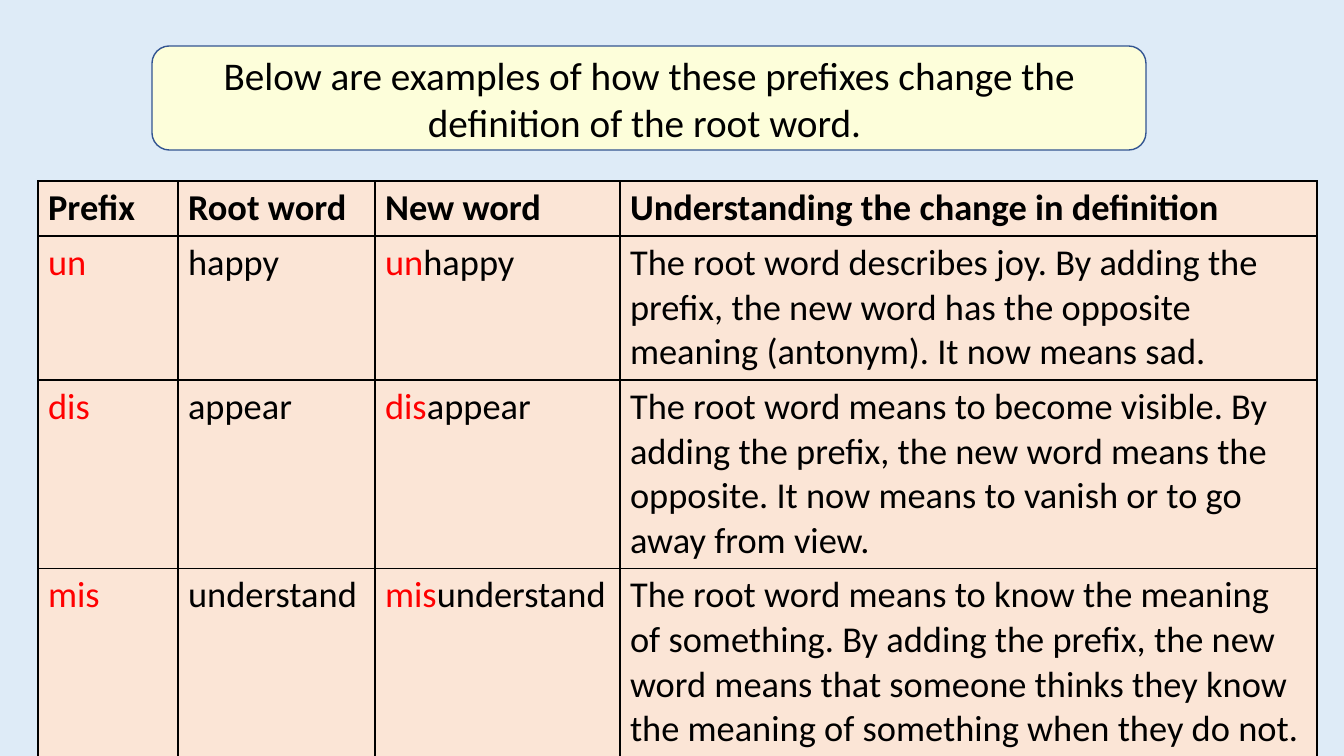
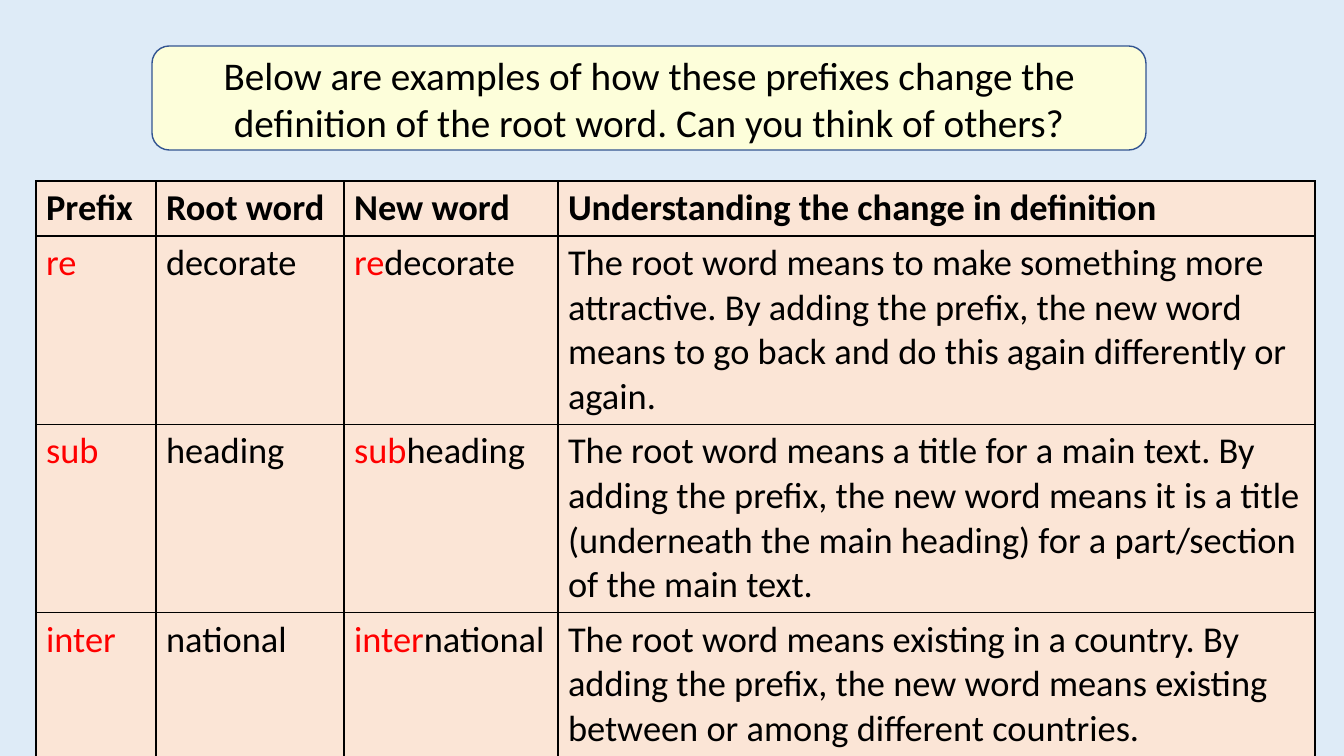
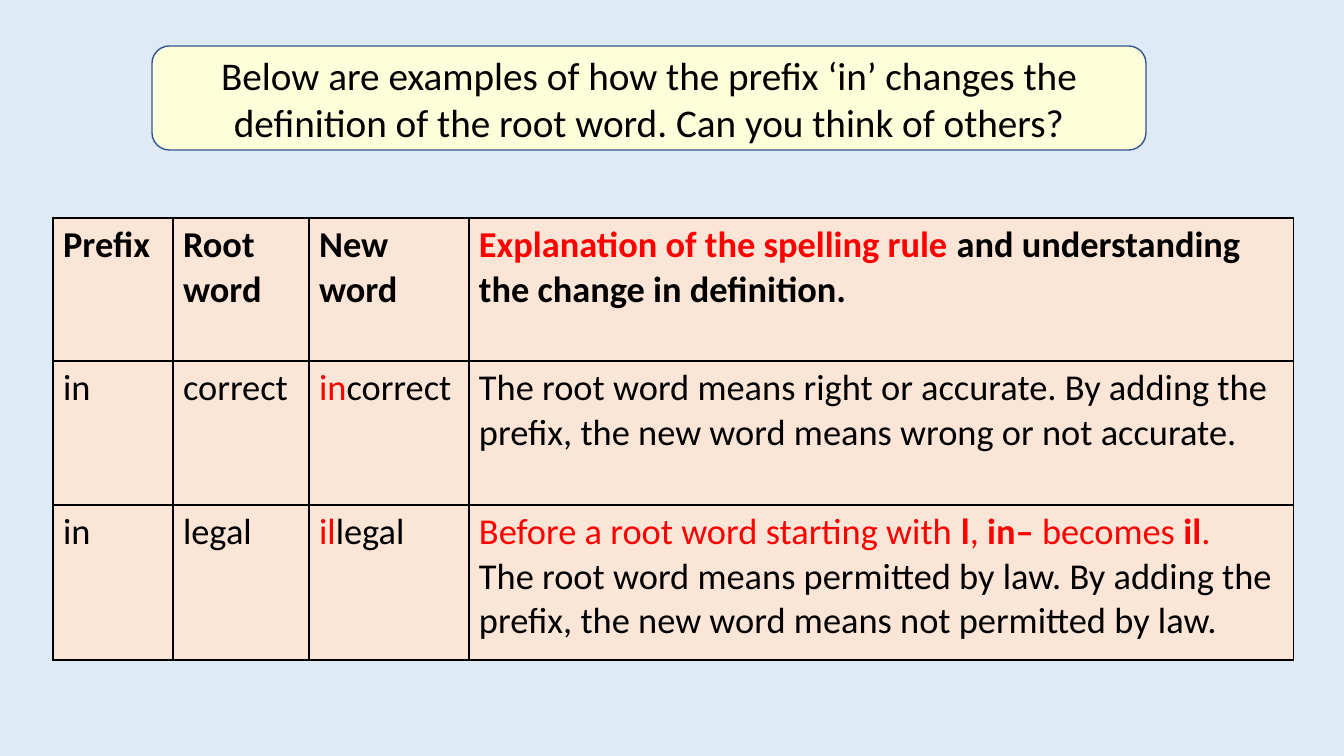
from lxml import etree
from pptx import Presentation
from pptx import util as u
from pptx.dml.color import RGBColor
from pptx.enum import shapes, text
from pptx.oxml.ns import qn

FONT = "Calibri"
SKY, CREAM, PEACH = "DEEBF7", "FDFEDA", "FBE5D6"
BLUE, BLACK, RED = "325491", "000000", "FF0000"
BANNER = (152, 46, 994, 104)
HEAD = ["Prefix", "Root word", "New word",
        "Understanding the change in definition"]


def px(n):
    return u.Emu(round(n * 914400 / 100.8))


def rgb(code):
    return RGBColor.from_string(code)


def paint(fill, code):
    fill.solid()
    fill.fore_color.rgb = rgb(code)


def style(para, size, bold=False):
    font = para.font
    font.name, font.size, font.bold = FONT, u.Pt(size), bold
    font.color.rgb = rgb(BLACK)


def write(frame, words, size, bold=False):
    """Fill a frame: | switches red on and off, * switches bold."""
    for n, line in enumerate(words.split("\n")):
        para = frame.add_paragraph() if n else frame.paragraphs[0]
        style(para, size, bold)
        for i, part in enumerate(line.split("|")):
            for j, bit in enumerate(part.split("*")):
                if not bit:
                    continue
                run = para.add_run()
                run.text = bit
                if i % 2:
                    run.font.color.rgb = rgb(RED)
                if j % 2:
                    run.font.bold = True


def border(cell):
    props = cell._tc.get_or_add_tcPr()
    for side in ("lnL", "lnR", "lnT", "lnB"):
        line = etree.SubElement(props, qn("a:" + side), w=str(u.Pt(1)))
        fill = etree.SubElement(line, qn("a:solidFill"))
        etree.SubElement(fill, qn("a:srgbClr"), val=BLACK)


def banner(slide, words, box):
    shape = slide.shapes.add_shape(
        shapes.MSO_SHAPE.ROUNDED_RECTANGLE, *map(px, box))
    shape.shadow.inherit = False
    paint(shape.fill, CREAM)
    shape.line.color.rgb = rgb(BLUE)
    shape.line.width = u.Pt(1)
    frame = shape.text_frame
    frame.word_wrap = True
    frame.vertical_anchor = text.MSO_ANCHOR.MIDDLE
    write(frame, words, 28)
    frame.paragraphs[0].alignment = text.PP_ALIGN.CENTER


def grid(slide, rows, spot, wide, high):
    box = (*spot, sum(wide), sum(high))
    table = slide.shapes.add_table(
        len(high), len(wide), *map(px, box)).table
    table.first_row = table.horz_banding = False
    for col, size in zip(table.columns, wide):
        col.width = px(size)
    for row, size in zip(table.rows, high):
        row.height = px(size)
    for r, row in enumerate(rows):
        for c, words in enumerate(row):
            cell = table.cell(r, c)
            border(cell)
            paint(cell.fill, PEACH)
            write(cell.text_frame, words, 26, bold=r == 0)


def page(deck, title, rows, spot, wide, high):
    slide = deck.slides.add_slide(deck.slide_layouts[6])
    paint(slide.background.fill, SKY)
    banner(slide, title, BANNER)
    grid(slide, rows, spot, wide, high)


def entry(prefix, root, sense):
    """Row whose new word is the red prefix joined to the root."""
    return [f"|{prefix}|", root, f"|{prefix}|{root}", sense]


PAGES = [
    dict(
        title="Below are examples of how these prefixes change the "
              "definition of the root word. ",
        rows=[
            HEAD,
            entry("un", "happy",
                  "The root word describes joy. By adding the prefix, the "
                  "new word has the opposite meaning (antonym). It now "
                  "means sad."),
            entry("dis", "appear",
                  "The root word means to become visible. By adding the "
                  "prefix, the new word means the opposite. It now means "
                  "to vanish or to go away from view."),
            entry("mis", "understand",
                  "The root word means to know the meaning of something. "
                  "By adding the prefix, the new word means that someone "
                  "thinks they know the meaning of something when they "
                  "do not."),
        ],
        spot=(38, 181), wide=(140, 197, 245, 697), high=(55, 144, 188, 188)),
    dict(
        title="Below are examples of how these prefixes change the "
              "definition of the root word. Can you think of others?",
        rows=[
            HEAD,
            entry("re", "decorate",
                  "The root word means to make something more attractive. "
                  "By adding the prefix, the new word means to go back and "
                  "do this again differently or again."),
            entry("sub", "heading",
                  "The root word means a title for a main text. By adding "
                  "the prefix, the new word means it is a title (underneath "
                  "the main heading) for a part/section of the main text."),
            entry("inter", "national",
                  "The root word means existing in a country. By adding the "
                  "prefix, the new word means existing between or among "
                  "different countries."),
        ],
        spot=(36, 181), wide=(120, 188, 214, 757), high=(55, 188, 188, 144)),
    dict(
        title="Below are examples of how the prefix ‘in’ changes the "
              "definition of the root word. Can you think of others?",
        rows=[
            ["Prefix", "Root\nword", "New word",
             "|Explanation of the spelling rule |and understanding the "
             "change in definition."],
            ["in", "correct", "|in|correct",
             "The root word means right or accurate. By adding the prefix, "
             "the new word means wrong or not accurate."],
            ["in", "legal", "|il|legal",
             "|Before a root word starting with *l*, *in– *becomes *il*.|\n"
             "The root word means permitted by law. By adding the prefix, "
             "the new word means not permitted by law."],
        ],
        spot=(53, 218), wide=(120, 136, 160, 825), high=(143, 144, 155)),
]


def main():
    deck = Presentation()
    deck.slide_width, deck.slide_height = px(1344), px(756)
    for item in PAGES:
        page(deck, **item)
    deck.save("out.pptx")


if __name__ == "__main__":
    main()
